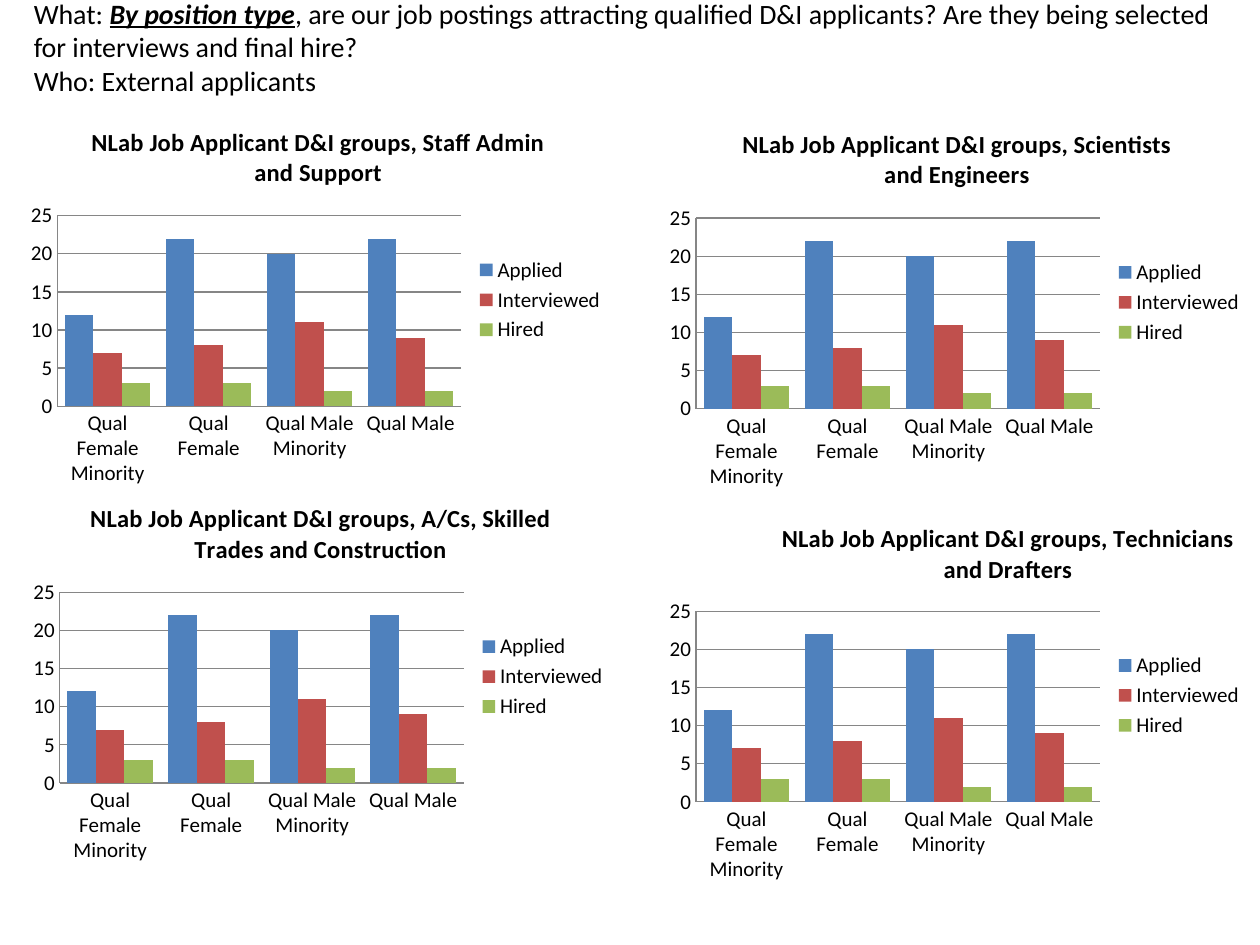
from dataclasses import dataclass
from lxml import etree
from pptx import Presentation
from pptx import util as u
from pptx.chart.data import CategoryChartData
from pptx.dml.color import RGBColor
from pptx.enum import chart as c, text
from pptx.oxml.ns import qn


@dataclass(frozen=True)
class Theme:
    font: str = "Calibri"
    ink: str = "000000"
    line: str = "868686"
    series: tuple = ("4F81BD", "C0504D", "9BBB59")
    intro_size: int = 16
    title_size: int = 14
    label_size: int = 12


def apply_format(target, values):
    for name, value in values.items():
        setattr(target, name, value)


def place_title(title, **values):
    """Place a chart title by fractions of the chart area."""
    element = title._element
    layout = element.find(qn("c:layout"))
    if layout is None:
        layout = etree.Element(qn("c:layout"))
        element.find(qn("c:tx")).addnext(layout)
    manual = etree.SubElement(layout, qn("c:manualLayout"))
    for name, value in values.items():
        etree.SubElement(manual, qn(f"c:{name}")).set("val", str(value))


class SlideBuilder:
    def __init__(self, slide, theme):
        self.slide = slide
        self.theme = theme

    def style_font(self, font, size, **extra):
        apply_format(font, {"name": self.theme.font, "size": u.Pt(size), **extra})
        font.color.rgb = RGBColor.from_string(self.theme.ink)

    def add_text(self, box, paragraphs):
        shape = self.slide.shapes.add_textbox(*map(u.Inches, box))
        frame = shape.text_frame
        apply_format(frame, {"word_wrap": True,
                             "auto_size": text.MSO_AUTO_SIZE.SHAPE_TO_FIT_TEXT})
        for index, runs in enumerate(paragraphs):
            paragraph = frame.add_paragraph() if index else frame.paragraphs[0]
            for words, extra in runs:
                run = paragraph.add_run()
                run.text = words
                self.style_font(run.font, self.theme.intro_size, **extra)

    def add_column_chart(self, box, title, categories, series, title_at=None):
        data = CategoryChartData()
        data.categories = categories
        for name, values in series.items():
            data.add_series(name, values)
        chart = self.slide.shapes.add_chart(
            c.XL_CHART_TYPE.COLUMN_CLUSTERED, *map(u.Inches, box), data).chart
        self.style_font(chart.font, self.theme.label_size)

        # Title
        frame = chart.chart_title.text_frame
        frame.text = title
        self.style_font(frame.paragraphs[0].runs[0].font, self.theme.title_size, bold=True)
        if title_at:
            place_title(chart.chart_title, xMode="edge", yMode="edge",
                        x=title_at[0], y=title_at[1])

        # Legend
        chart.has_legend = True
        apply_format(chart.legend, {"position": c.XL_LEGEND_POSITION.RIGHT,
                                    "include_in_layout": False})
        self.style_font(chart.legend.font, self.theme.label_size)

        # Axes and gridlines
        line_color = RGBColor.from_string(self.theme.line)
        for axis in (chart.category_axis, chart.value_axis):
            apply_format(axis, {"major_tick_mark": c.XL_TICK_MARK.NONE,
                                "minor_tick_mark": c.XL_TICK_MARK.NONE})
            self.style_font(axis.tick_labels.font, self.theme.label_size)
            axis.format.line.color.rgb = line_color
        apply_format(chart.value_axis, {"minimum_scale": 0, "maximum_scale": 25,
                                        "major_unit": 5, "has_major_gridlines": True})
        chart.value_axis.major_gridlines.format.line.color.rgb = line_color

        # Columns
        plot = chart.plots[0]
        apply_format(plot, {"gap_width": 55, "overlap": 0, "vary_by_categories": False})
        for column, color in zip(plot.series, self.theme.series):
            column.format.fill.solid()
            column.format.fill.fore_color.rgb = RGBColor.from_string(color)
            column.invert_if_negative = False


def main():
    presentation = Presentation()
    presentation.slide_width, presentation.slide_height = u.Inches(10), u.Inches(7.5)
    slide = presentation.slides.add_slide(presentation.slide_layouts[6])
    builder = SlideBuilder(slide, Theme())

    # Question at the top
    emphasis = {"bold": True, "italic": True, "underline": True}
    builder.add_text((0.17, -0.08, 9.67, 0.91), [
        [("What: ", {}), ("By position type", emphasis),
         (", are our job postings attracting qualified D&I applicants? "
          "Are they being selected for interviews and final hire?", {})],
        [("Who: External applicants", {})],
    ])

    # One chart for each position type
    categories = ["Qual Female Minority", "Qual Female", "Qual Male Minority", "Qual Male"]
    series = {"Applied": (12, 22, 20, 22), "Interviewed": (7, 8, 11, 9), "Hired": (3, 3, 2, 2)}
    charts = [
        (0.15, 0.84, "Staff Admin and Support", None),
        (5.22, 0.86, "Scientists and Engineers", None),
        (0.17, 3.83, "A/Cs, Skilled Trades and Construction", None),
        (5.22, 3.98, "Technicians and Drafters", (0.2, 0.04)),
    ]
    for left, top, group, title_at in charts:
        builder.add_column_chart((left, top, 4.75, 3.08),
                                 f"NLab Job Applicant D&I groups, {group}",
                                 categories, series, title_at)

    presentation.save("out.pptx")


if __name__ == "__main__":
    main()
